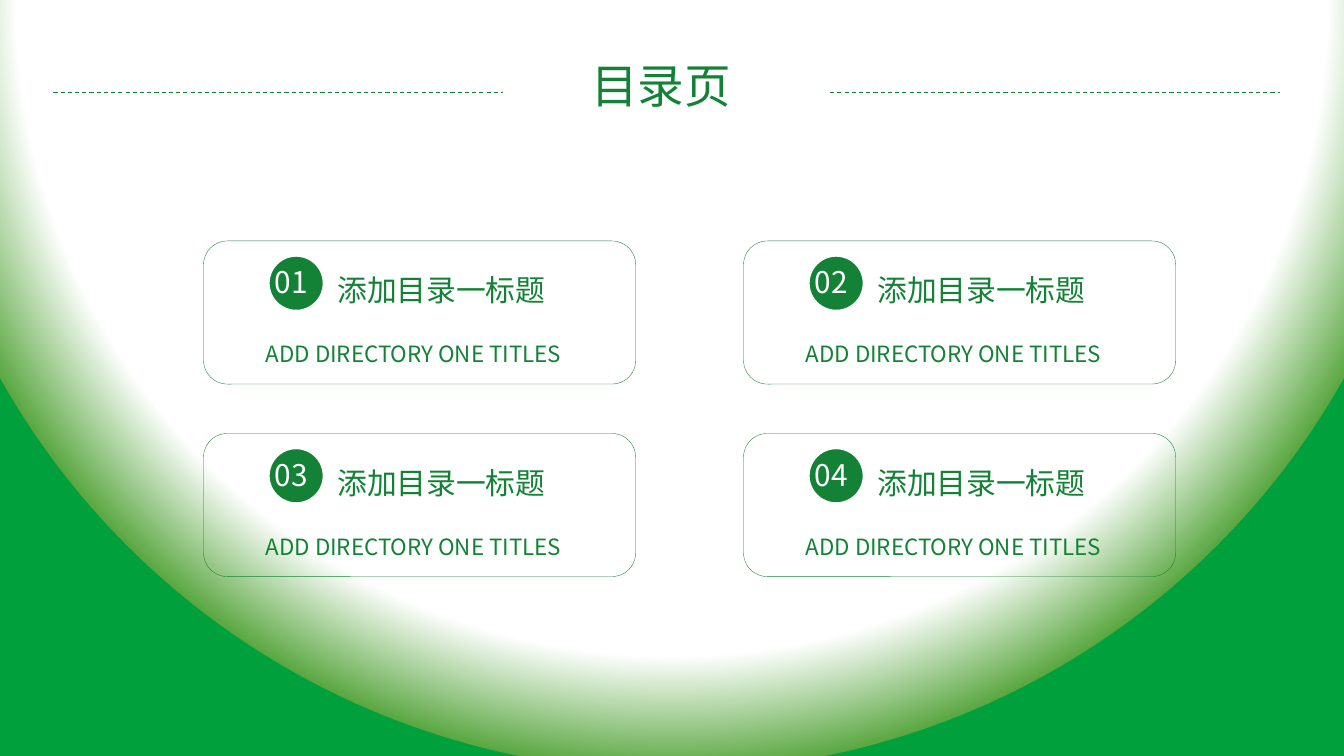
from dataclasses import dataclass

import lxml.etree
import pptx
import pptx.dml.color
import pptx.enum.dml
import pptx.enum.shapes
import pptx.enum.text
import pptx.oxml
import pptx.oxml.ns
import pptx.util

EMU_PER_PX = 9144  # 100 px to the inch
FONT = "Noto Sans CJK SC"
COLORS = {"ink": "138236", "white": "FFFFFF", "olive": "5AA741", "green": "00A03C"}
BACKGROUND_STOPS = [(0, "white"), (85, "white"), (100, "olive"), (100, "green")]

CARD_LEFT, CARD_TOP = 202, 239
CARD_WIDTH, CARD_HEIGHT = 429, 142
COLUMN_PITCH, ROW_PITCH = 536, 191
RULE_Y, RULE_LENGTH = 92, 446


@dataclass(frozen=True)
class Entry:
    number: str
    heading: str
    subtitle: str


@dataclass(frozen=True)
class Label:
    """A line of text; its place is relative to the owner's corner."""
    text: str
    left: int
    top: int
    width: int
    height: int
    size: float
    color: str = "ink"


ENTRIES = [
    Entry(number, "添加目录一标题", "ADD DIRECTORY ONE TITLES")
    for number in ("01", "02", "03", "04")
]


def px(length: int) -> pptx.util.Emu:
    return pptx.util.Emu(length * EMU_PER_PX)


def rgb(name: str) -> pptx.dml.color.RGBColor:
    return pptx.dml.color.RGBColor.from_string(COLORS[name])


def paint_background(slide) -> None:
    """Fill the background with a circular gradient centred above the slide."""
    slide.background.fill.solid()
    solid = slide.element.xpath(".//p:bgPr/a:solidFill")[0]
    stops = "".join(
        f'<a:gs pos="{percent * 1000}"><a:srgbClr val="{COLORS[name]}"/></a:gs>'
        for percent, name in BACKGROUND_STOPS
    )
    gradient = pptx.oxml.parse_xml(
        f'<a:gradFill {pptx.oxml.ns.nsdecls("a")} rotWithShape="1"><a:gsLst>{stops}</a:gsLst>'
        '<a:path path="circle"><a:fillToRect l="50000" t="-80000" r="50000" b="180000"/></a:path>'
        "</a:gradFill>"
    )
    solid.getparent().replace(solid, gradient)


def add_label(shapes, label: Label, left: int = 0, top: int = 0, centered: bool = False) -> None:
    box = shapes.add_textbox(
        px(left + label.left), px(top + label.top), px(label.width), px(label.height)
    )
    frame = box.text_frame
    frame.word_wrap = centered
    frame.auto_size = pptx.enum.text.MSO_AUTO_SIZE.SHAPE_TO_FIT_TEXT
    paragraph = frame.paragraphs[0]
    if centered:
        paragraph.alignment = pptx.enum.text.PP_ALIGN.CENTER
    run = paragraph.add_run()
    run.text = label.text
    run.font.size = pptx.util.Pt(label.size)
    run.font.color.rgb = rgb(label.color)
    run.font.name = FONT
    east_asian = lxml.etree.SubElement(run.font._element, pptx.oxml.ns.qn("a:ea"))
    east_asian.set("typeface", FONT)


def add_rule(slide, left: int) -> None:
    """Draw one of the dashed lines beside the page title."""
    rule = slide.shapes.add_connector(
        pptx.enum.shapes.MSO_CONNECTOR.STRAIGHT,
        px(left), px(RULE_Y), px(left + RULE_LENGTH), px(RULE_Y),
    )
    rule.line.color.rgb = rgb("ink")
    rule.line.width = pptx.util.Pt(0.75)
    rule.line.dash_style = pptx.enum.dml.MSO_LINE.DASH
    lxml.etree.SubElement(rule._element.spPr, pptx.oxml.ns.qn("a:effectLst"))


def add_card(slide, entry: Entry, left: int, top: int) -> None:
    frame = slide.shapes.add_shape(
        pptx.enum.shapes.MSO_SHAPE.ROUNDED_RECTANGLE,
        px(left), px(top), px(CARD_WIDTH), px(CARD_HEIGHT),
    )
    frame.shadow.inherit = False
    frame.fill.background()
    frame.line.color.rgb = rgb("ink")
    frame.line.width = pptx.util.Pt(0.25)

    content = slide.shapes.add_group_shape().shapes
    add_label(content, Label(entry.heading, 123, 26, 239, 46, 21.3), left, top)
    badge = content.add_shape(
        pptx.enum.shapes.MSO_SHAPE.OVAL, px(left + 65), px(top + 15), px(54), px(54)
    )
    badge.shadow.inherit = False
    badge.fill.solid()
    badge.fill.fore_color.rgb = rgb("ink")
    badge.line.color.rgb = rgb("white")
    badge.line.width = pptx.util.Pt(1)
    add_label(content, Label(entry.number, 61, 18, 55, 46, 21.3, "white"), left, top)
    add_label(content, Label(entry.subtitle, 52, 94, 332, 37, 16), left, top)


def main() -> None:
    presentation = pptx.Presentation()
    presentation.slide_width, presentation.slide_height = px(1334), px(750)
    slide = presentation.slides.add_slide(presentation.slide_layouts[6])
    paint_background(slide)
    add_label(slide.shapes, Label("目录页", 541, 52, 231, 66, 33.3), centered=True)
    for rule_left in (824, 53):
        add_rule(slide, rule_left)
    for index, entry in enumerate(ENTRIES):
        row, column = divmod(index, 2)
        add_card(slide, entry, CARD_LEFT + column * COLUMN_PITCH, CARD_TOP + row * ROW_PITCH)
    presentation.save("out.pptx")


if __name__ == "__main__":
    main()
